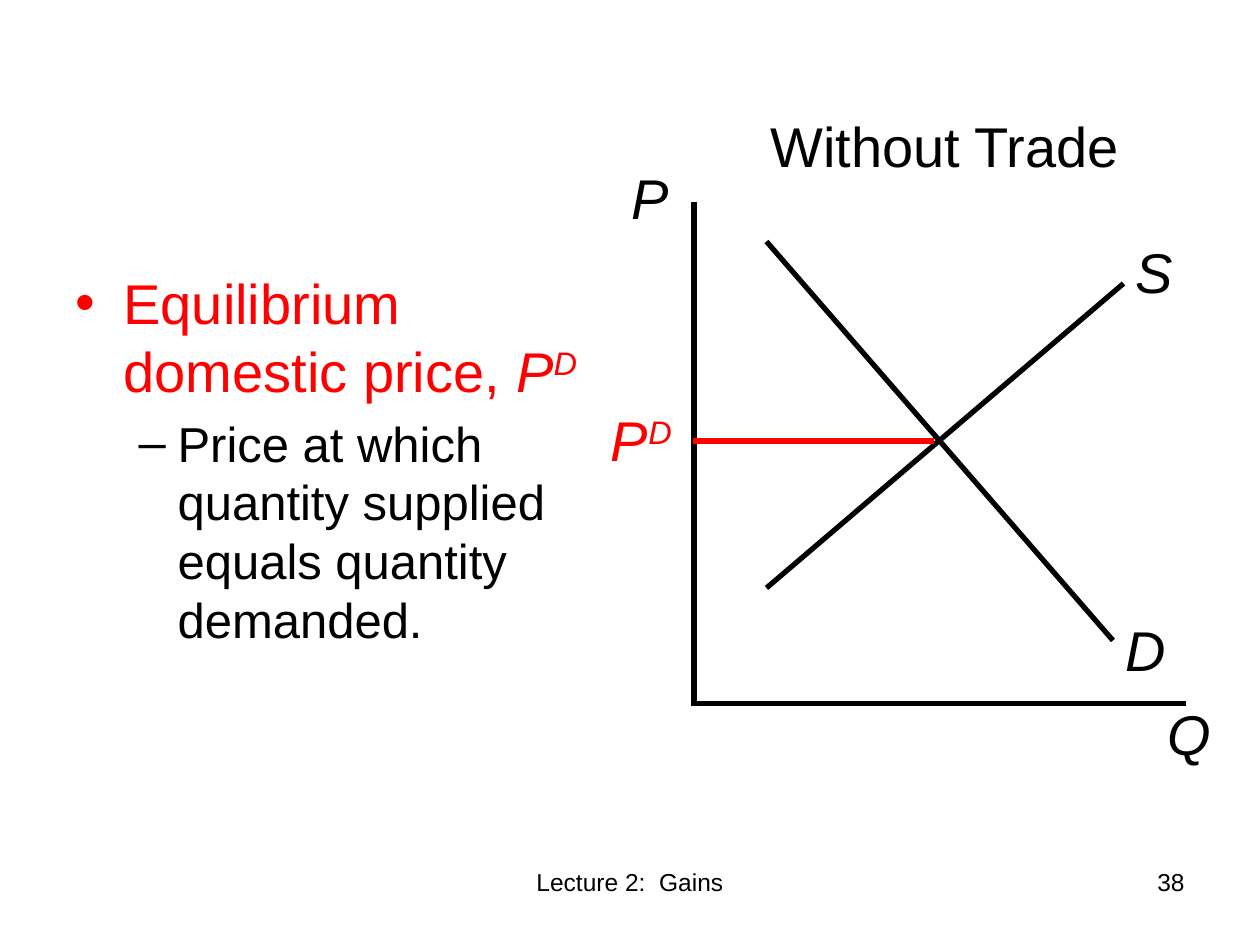
from collections import namedtuple
from dataclasses import dataclass
from lxml.etree import SubElement
from pptx import Presentation
from pptx.dml.color import RGBColor as Color
from pptx.enum.shapes import MSO_CONNECTOR as Link
from pptx.enum.text import MSO_ANCHOR as Anchor, MSO_AUTO_SIZE as Fit, PP_ALIGN as Align
from pptx.oxml.ns import qn
from pptx.util import Inches, Pt

Box = namedtuple("Box", "x y w h")
COLS, ROWS = 120, 90


@dataclass(frozen=True)
class Theme:
    font: str = "Arial"
    ink: Color = Color(0, 0, 0)
    mark: Color = Color(255, 0, 0)
    head: int = 32
    sub: int = 28
    foot: int = 14
    line: int = 3


THEME = Theme()


def unit(n):
    return Inches(n / 12)


def place(shape, box):
    shape.left, shape.top, shape.width, shape.height = map(unit, box)


def style(run, size, color, slant=False, raised=False):
    font = run.font
    font.name, font.size, font.italic = THEME.font, Pt(size), slant
    font.color.rgb = color
    if raised:
        run._r.get_or_add_rPr().set("baseline", "30000")


def add_run(para, text, *look):
    run = para.add_run()
    run.text = text
    style(run, *look)


def add_price(para):
    add_run(para, "P", THEME.head, THEME.mark, True)
    add_run(para, "D", THEME.head, THEME.mark, True, True)


def add_box(slide, box):
    shape = slide.shapes.add_textbox(*map(unit, box))
    shape.text_frame.word_wrap = True
    return shape.text_frame.paragraphs[0]


def add_line(slide, box, start, end, color):
    ends = [unit(n) for x, y in (start, end) for n in (box.x + x, box.y + y)]
    line = slide.shapes.add_connector(Link.STRAIGHT, *ends)
    line.line.color.rgb = color
    line.line.width = Pt(THEME.line)
    SubElement(line._element.spPr, qn("a:effectLst"))


def add_label(slide, box, x, y):
    left = box.x + x
    return add_box(slide, Box(left, box.y + y, min(24, COLS - left), 7.7))


def add_graph(slide, box):
    lines = (
        ((0.1, 0), (0.1, box.h), THEME.ink),
        ((41, 7.8), (7, 36.8), THEME.ink),
        ((box.w, 47.8), (0, 47.8), THEME.ink),
        ((40, 41.8), (7, 3.8), THEME.ink),
        ((23, 22.8), (0, 22.8), THEME.mark),
    )
    for start, end, color in lines:
        add_line(slide, box, start, end, color)
    names = {"S": (41, 2.8), "D": (40, 38.8), "Q": (44, 46.8), "P": (-7, -4.2)}
    for name, (x, y) in names.items():
        add_run(add_label(slide, box, x, y), name, THEME.head, THEME.ink, True)
    add_price(add_label(slide, box, -9, 18.8))


def add_title(slide, box):
    title = slide.shapes.title
    place(title, box)
    frame = title.text_frame
    frame.text = "Without Trade"
    frame.auto_size = Fit.NONE
    frame.vertical_anchor = Anchor.TOP
    para = frame.paragraphs[0]
    para.alignment = Align.CENTER
    style(para.runs[0], THEME.head, THEME.ink)


def set_bullet(para, mark, left, hang):
    props = para._p.get_or_add_pPr()
    props.set("marL", str(Inches(left)))
    props.set("indent", str(-Inches(hang)))
    gap = SubElement(props, qn("a:spcBef"))
    SubElement(gap, qn("a:spcPct")).set("val", "20000")
    SubElement(props, qn("a:buFont")).set("typeface", THEME.font)
    SubElement(props, qn("a:buChar")).set("char", mark)


def add_list(slide, box):
    body = slide.placeholders[1]
    place(body, box)
    frame = body.text_frame
    frame.auto_size = Fit.NONE
    frame.text = "Equilibrium domestic price, "
    head = frame.paragraphs[0]
    style(head.runs[0], THEME.head, THEME.mark)
    add_price(head)
    set_bullet(head, "•", 0.38, 0.38)
    sub = frame.add_paragraph()
    sub.text = "Price at which quantity supplied equals quantity demanded."
    sub.level = 1
    style(sub.runs[0], THEME.sub, THEME.ink)
    set_bullet(sub, "–", 0.81, 0.31)


def add_foot(slide, box):
    parts = (
        ("Lecture 2:  Gains", 0, 38, Align.CENTER),
        ("38", 45, 28, Align.RIGHT),
    )
    for text, x, width, align in parts:
        para = add_box(slide, Box(box.x + x, box.y, width, box.h))
        para.alignment = align
        add_run(para, text, THEME.foot, THEME.ink)


def main():
    deck = Presentation()
    deck.slide_width, deck.slide_height = unit(COLS), unit(ROWS)
    slide = deck.slides.add_slide(deck.slide_layouts[1])
    add_foot(slide, Box(41, 82, 73, 6.25))
    add_graph(slide, Box(66, 19.2, 47, 48))
    add_title(slide, Box(72, 10, 36, 7.7))
    add_list(slide, Box(6, 25, 55, 38))
    deck.save("out.pptx")


if __name__ == "__main__":
    main()
